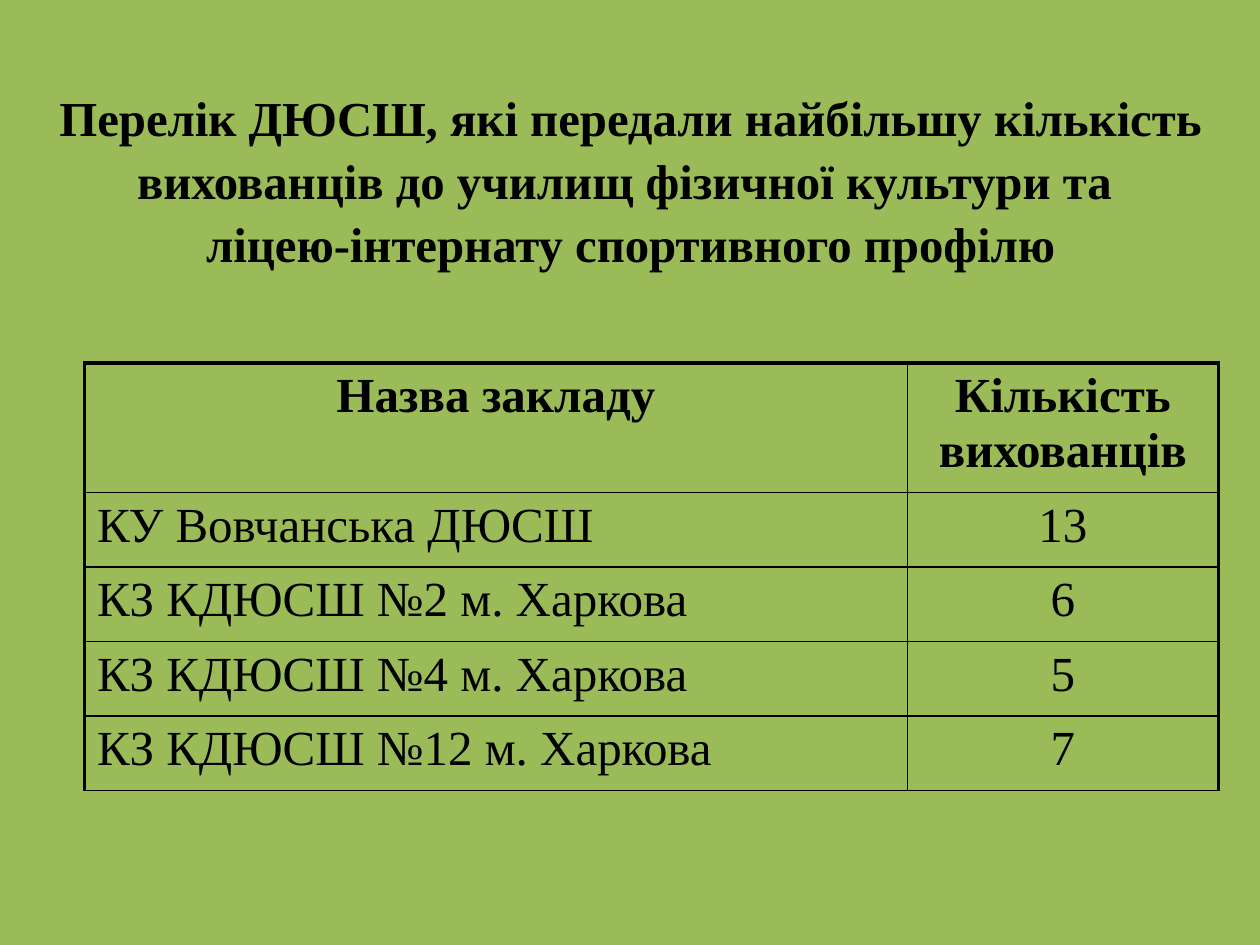
from lxml.etree import SubElement
from pptx import Presentation
from pptx.dml.color import RGBColor
from pptx.enum.text import MSO_ANCHOR, MSO_AUTO_SIZE, PP_ALIGN
from pptx.oxml.ns import qn
from pptx.util import Pt

FONT = "Times New Roman"
BLACK = "000000"
GREEN = "9BBB59"
THIN, THICK = 1, 2.25
HEADING = ("Перелік ДЮСШ, які передали найбільшу кількість вихованців "
           "до училищ фізичної культури та \v"
           "ліцею-інтернату спортивного профілю\v")
SCHOOLS = [
    ("Назва закладу", "Кількість вихованців"),
    ("КУ Вовчанська ДЮСШ", "13"),
    ("КЗ КДЮСШ №2 м. Харкова", "6"),
    ("КЗ КДЮСШ №4 м. Харкова", "5"),
    ("КЗ КДЮСШ №12 м. Харкова", "7"),
]


def paint(color_format, color):
    """Apply a hex colour to a colour format."""
    color_format.rgb = RGBColor.from_string(color)


def format_paragraph(paragraph, size, bold, align):
    """Align a paragraph and format its runs."""
    paragraph.alignment = align
    for run in paragraph.runs:
        run.font.name = FONT
        run.font.size = Pt(size)
        run.font.bold = bold
        paint(run.font.color, BLACK)


def set_space_before(paragraph, percent):
    """Set the space before a paragraph as a share of its line."""
    properties = paragraph._p.get_or_add_pPr()
    spacing = SubElement(properties, qn("a:spcBef"))
    SubElement(spacing, qn("a:spcPct"), val=str(percent * 1000))


def set_borders(cell, widths):
    """Draw black cell borders from a mapping of side to width."""
    properties = cell._tc.get_or_add_tcPr()
    for position, (side, width) in enumerate(widths.items()):
        line = properties.makeelement(qn(f"a:ln{side}"), {"w": str(Pt(width))})
        fill = SubElement(line, qn("a:solidFill"))
        SubElement(fill, qn("a:srgbClr"), val=BLACK)
        properties.insert(position, line)


def add_heading(slide):
    """Place and format the slide title."""
    heading = slide.shapes.title
    heading.left, heading.top = Pt(14.4), Pt(82.8)
    heading.width, heading.height = Pt(692), Pt(90)
    frame = heading.text_frame
    frame.text = HEADING
    frame.word_wrap = True
    frame.auto_size = MSO_AUTO_SIZE.NONE
    frame.vertical_anchor = MSO_ANCHOR.MIDDLE
    frame.paragraphs[0].line_spacing = 1.08
    format_paragraph(frame.paragraphs[0], 27.9, True, PP_ALIGN.CENTER)


def fill_cell(cell, text, row, column):
    """Write one table cell with its alignment and borders."""
    cell.text = text
    cell.fill.background()
    centred = row == 0 or column == 1
    paragraph = cell.text_frame.paragraphs[0]
    format_paragraph(paragraph, 28, row == 0,
                     PP_ALIGN.CENTER if centred else PP_ALIGN.LEFT)
    set_space_before(paragraph, 20)
    set_borders(cell, {
        "L": THICK if column == 0 else THIN,
        "R": THICK if column == 1 else THIN,
        "T": THICK if row == 0 else THIN,
        "B": THIN,
    })


def add_school_table(slide):
    """Add the table of schools and their pupil counts."""
    schools = slide.shapes.add_table(
        len(SCHOOLS), 2, Pt(48.24), Pt(207.4), Pt(648), Pt(244.4)).table
    schools.first_row = False
    schools.horz_banding = False
    for column, width in zip(schools.columns, (470.2, 177.8)):
        column.width = Pt(width)
    for row, values in enumerate(SCHOOLS):
        schools.rows[row].height = Pt(74 if row == 0 else 42.6)
        for column, text in enumerate(values):
            fill_cell(schools.cell(row, column), text, row, column)


def main():
    """Build and save the slide."""
    presentation = Presentation()
    presentation.slide_width, presentation.slide_height = Pt(720), Pt(540)
    slide = presentation.slides.add_slide(presentation.slide_layouts[5])
    slide.background.fill.solid()
    paint(slide.background.fill.fore_color, GREEN)
    add_heading(slide)
    add_school_table(slide)
    presentation.save("out.pptx")


if __name__ == "__main__":
    main()
